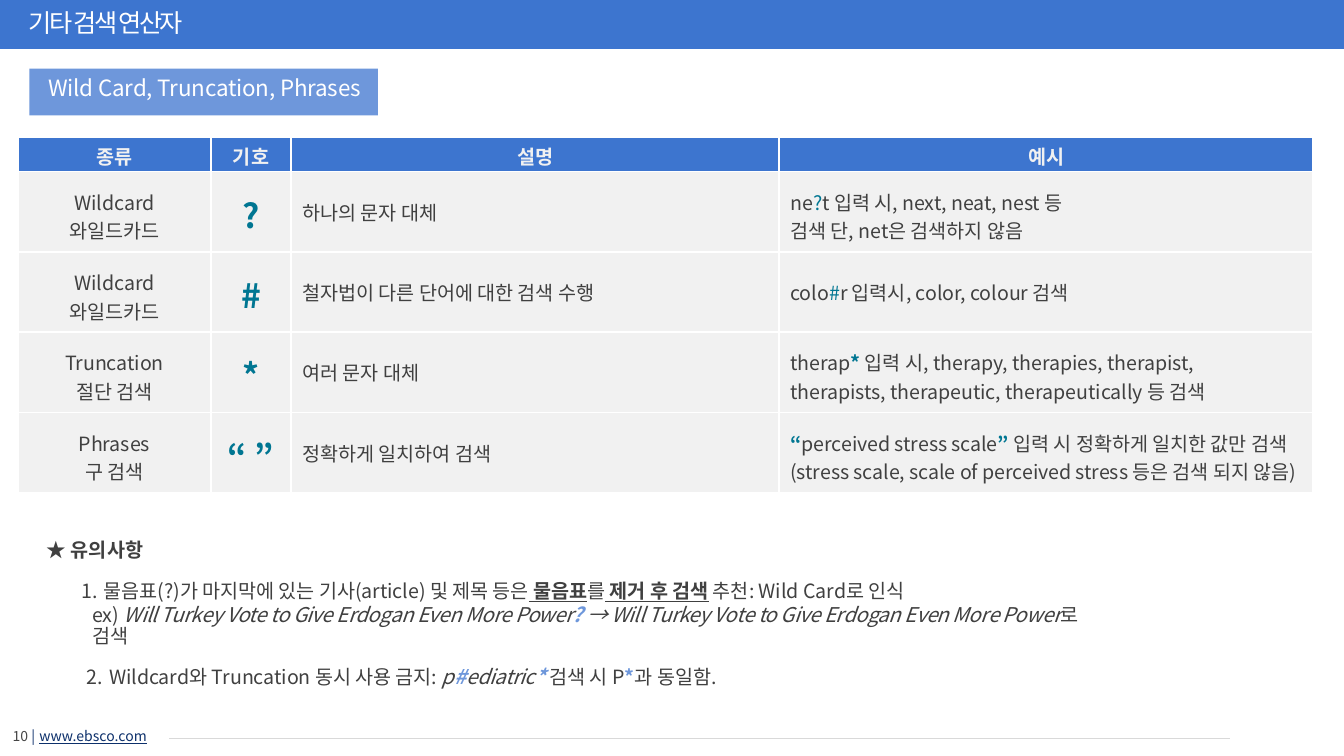
"""Build the slide on wildcard, truncation and phrase search operators."""
from dataclasses import dataclass

from lxml import etree
from pptx import Presentation
from pptx import util as u
from pptx.dml import color as dml
from pptx.enum import shapes, text
from pptx.oxml import ns


@dataclass(frozen=True)
class Theme:
    font: str = "Noto Sans CJK KR"
    blue: str = "3D75CF"
    light_blue: str = "6E97DB"
    teal: str = "007692"
    dark: str = "404040"
    pale: str = "F1F1F1"
    white: str = "FFFFFF"
    rule: str = "D9D9D9"
    page: str = "454545"
    link: str = "0D306B"
    title: float = 18
    label: float = 16
    body: float = 14
    quote: float = 14.5
    symbol: float = 24
    footer: float = 10


THEME = Theme()
LEFT, CENTER = text.PP_ALIGN.LEFT, text.PP_ALIGN.CENTER
TOP, MIDDLE = text.MSO_ANCHOR.TOP, text.MSO_ANCHOR.MIDDLE
KEY = dict(color=THEME.teal)
BOLD_KEY = dict(color=THEME.teal, bold=True)
STRESS = dict(bold=True, underline=True)
QUOTE = dict(size=THEME.quote, italic=True, spacing=-0.33)
QUOTE_KEY = dict(QUOTE, color=THEME.light_blue, bold=True)
HEADLINE = "Will Turkey Vote to Give Erdogan Even More Power"

COLUMNS = [("종류", 137.5), ("기호", 57.6), ("설명", 348.5), ("예시", 381.5)]
OPERATORS = [
    (["Wildcard", "와일드카드"], "?", "하나의 문자 대체",
     [["ne", ("?", KEY), "t 입력 시, next, neat, nest 등"],
      "검색 단, net은 검색하지 않음"]),
    (["Wildcard", "와일드카드"], "#", "철자법이 다른 단어에 대한 검색 수행",
     [["colo", ("#", KEY), "r 입력시, color, colour 검색"]]),
    (["Truncation", "절단 검색"], "*", "여러 문자 대체",
     [["therap", ("* ", BOLD_KEY), "입력 시, therapy, therapies, therapist,"],
      "therapists, therapeutic, therapeutically 등 검색"]),
    (["Phrases", "구 검색"], "“ ”", "정확하게 일치하여 검색",
     [[("“", BOLD_KEY), "perceived stress scale", ("” ", BOLD_KEY),
       "입력 시 정확하게 일치한 값만 검색"],
      "(stress scale, scale of perceived stress 등은 검색 되지 않음)"]),
]
NOTES = [
    (["★ 유의사항"], dict(bold=True, spacing=0.15)),
    (["물음표(?)가 마지막에 있는 기사(article) 및 제목 등은", (" 물음표", STRESS), "를",
      (" 제거 후 검색", STRESS), " 추천: Wild Card로 인식"],
     dict(before=12, indent=41, hanging=16, number=1)),
    (["ex) ", (HEADLINE, QUOTE), ("? ", QUOTE_KEY), ("→ " + HEADLINE, QUOTE), "로 검색"],
     dict(before=2.5, indent=33, line=0.87)),
    (["Wildcard와 Truncation 동시 사용 금지: ", ("p", QUOTE), ("#", QUOTE_KEY),
      ("ediatric", QUOTE), ("* ", QUOTE_KEY), "검색 시 P",
      ("*", dict(color=THEME.light_blue, bold=True)), "과 동일함."],
     dict(before=12, indent=45, hanging=16, number=2)),
]


def add_run(paragraph, words, size=THEME.body, color=THEME.dark, bold=False,
            italic=False, underline=False, spacing=-0.05):
    run = paragraph.add_run()
    run.text = words
    font = run.font
    font.size, font.bold, font.italic, font.underline = u.Pt(size), bold, italic, underline
    font.color.rgb = dml.RGBColor.from_string(color)
    font.name = THEME.font
    properties = run._r.get_or_add_rPr()
    properties.set("spc", str(round(spacing * 100)))
    etree.SubElement(properties, ns.qn("a:ea"), typeface=THEME.font)


def write(paragraph, content, align=LEFT, before=0, indent=0, hanging=0,
          number=None, line=None, **style):
    properties = paragraph._p.get_or_add_pPr()
    properties.set("marL", str(u.Pt(indent)))
    properties.set("indent", str(-u.Pt(hanging)))
    if number:
        etree.SubElement(properties, ns.qn("a:buAutoNum"),
                         type="arabicPeriod", startAt=str(number))
    paragraph.alignment = align
    paragraph.space_before = u.Pt(before)
    if line:
        paragraph.line_spacing = line
    for part in [content] if isinstance(content, str) else content:
        words, extra = (part, {}) if isinstance(part, str) else part
        add_run(paragraph, words, **{**style, **extra})


def paragraphs_of(frame, count):
    return [frame.paragraphs[0]] + [frame.add_paragraph() for _ in range(count - 1)]


class SlideBuilder:
    def __init__(self, slide, theme):
        self.slide, self.theme = slide, theme

    def frame(self, shape, left=0, top=0):
        frame = shape.text_frame
        frame.word_wrap = True
        frame.auto_size = text.MSO_AUTO_SIZE.NONE
        frame.vertical_anchor = TOP
        frame.margin_left, frame.margin_top = u.Pt(left), u.Pt(top)
        frame.margin_right = frame.margin_bottom = 0
        return frame

    def box(self, left, top, width, height, inset=0):
        area = map(u.Pt, (left, top, width, height))
        return self.frame(self.slide.shapes.add_textbox(*area), top=inset)

    def rectangle(self, left, top, width, height, color):
        area = map(u.Pt, (left, top, width, height))
        shape = self.slide.shapes.add_shape(shapes.MSO_SHAPE.RECTANGLE, *area)
        shape.shadow.inherit = False
        shape.fill.solid()
        shape.fill.fore_color.rgb = dml.RGBColor.from_string(color)
        shape.line.fill.background()
        return shape

    def title(self, words):
        shape = self.slide.shapes.title
        shape.left, shape.top, shape.width, shape.height = map(u.Pt, (20.5, 5, 125, 24))
        shape.element.getparent().append(shape.element)
        write(self.frame(shape).paragraphs[0], words, size=self.theme.title,
              color=self.theme.white, spacing=-1.7)

    def label(self, words):
        shape = self.rectangle(21, 49, 249, 33.5, self.theme.light_blue)
        write(self.frame(shape, 13.5, 4).paragraphs[0], words, size=self.theme.label,
              color=self.theme.white, spacing=-0.1)

    def rule(self, start, end, top):
        line = self.slide.shapes.add_connector(
            shapes.MSO_CONNECTOR.STRAIGHT, *map(u.Pt, (start, top, end, top)))
        line.line.color.rgb = dml.RGBColor.from_string(self.theme.rule)
        line.line.width = u.Pt(1)
        etree.SubElement(line._element.spPr, ns.qn("a:effectLst"))

    def cell(self, cell, contents, fill, left=0, top=0, **style):
        properties = cell._tc.get_or_add_tcPr()
        for side in ("lnL", "lnR", "lnT", "lnB"):
            border = etree.SubElement(properties, ns.qn("a:" + side), w=str(u.Pt(1.5)))
            solid = etree.SubElement(border, ns.qn("a:solidFill"))
            etree.SubElement(solid, ns.qn("a:srgbClr"), val=self.theme.white)
        cell.fill.solid()
        cell.fill.fore_color.rgb = dml.RGBColor.from_string(fill)
        cell.margin_left, cell.margin_top = u.Pt(left), u.Pt(top)
        cell.margin_right = cell.margin_bottom = 0
        cell.vertical_anchor = MIDDLE
        for paragraph, content in zip(paragraphs_of(cell.text_frame, len(contents)), contents):
            write(paragraph, content, **style)

    def table(self, columns, operators, left, top, header=24.5, row_height=57.4):
        width = sum(size for _, size in columns)
        height = header + row_height * len(operators)
        table = self.slide.shapes.add_table(
            len(operators) + 1, len(columns), *map(u.Pt, (left, top, width, height))).table
        table.rows[0].height = u.Pt(header)
        for index, (name, size) in enumerate(columns):
            table.columns[index].width = u.Pt(size)
            self.cell(table.cell(0, index), [name], self.theme.blue, top=2.5, align=CENTER,
                      color=self.theme.pale, bold=True, spacing=0.1)
        for index, (names, symbol, meaning, examples) in enumerate(operators, 1):
            table.rows[index].height = u.Pt(row_height)
            name_cell, symbol_cell, meaning_cell, example_cell = table.rows[index].cells
            pale = self.theme.pale
            self.cell(name_cell, names, pale, top=6, align=CENTER)
            self.cell(symbol_cell, [symbol], pale, top=3, align=CENTER,
                      size=self.theme.symbol, **BOLD_KEY)
            self.cell(meaning_cell, [meaning], pale, left=8)
            self.cell(example_cell, examples, pale, left=8, top=6 * (len(examples) - 1))

    def notes(self, notes):
        frame = self.box(33, 384, 765, 102, inset=0.5)
        for paragraph, (content, style) in zip(paragraphs_of(frame, len(notes)), notes):
            write(paragraph, content, **style)

    def footer(self, page, address):
        link = dict(color=self.theme.link)
        write(self.box(7, 518.5, 108, 17, inset=1).paragraphs[0],
              [f"{page} ", ("| ", dict(link, spacing=0.4)),
               (address, dict(link, underline=True))],
              indent=2, size=self.theme.footer, color=self.theme.page, spacing=0.05)


def main():
    presentation = Presentation()
    presentation.slide_width, presentation.slide_height = u.Pt(960), u.Pt(540)
    slide = presentation.slides.add_slide(presentation.slide_layouts[5])
    builder = SlideBuilder(slide, THEME)
    builder.rule(121, 878.5, 527.5)
    builder.notes(NOTES)
    builder.table(COLUMNS, OPERATORS, 13, 98)
    builder.label("Wild Card, Truncation, Phrases")
    builder.rectangle(0, 0, 960, 35, THEME.blue)
    builder.title("기타 검색 연산자")
    builder.footer(10, "www.ebsco.com")
    presentation.save("out.pptx")


if __name__ == "__main__":
    main()
